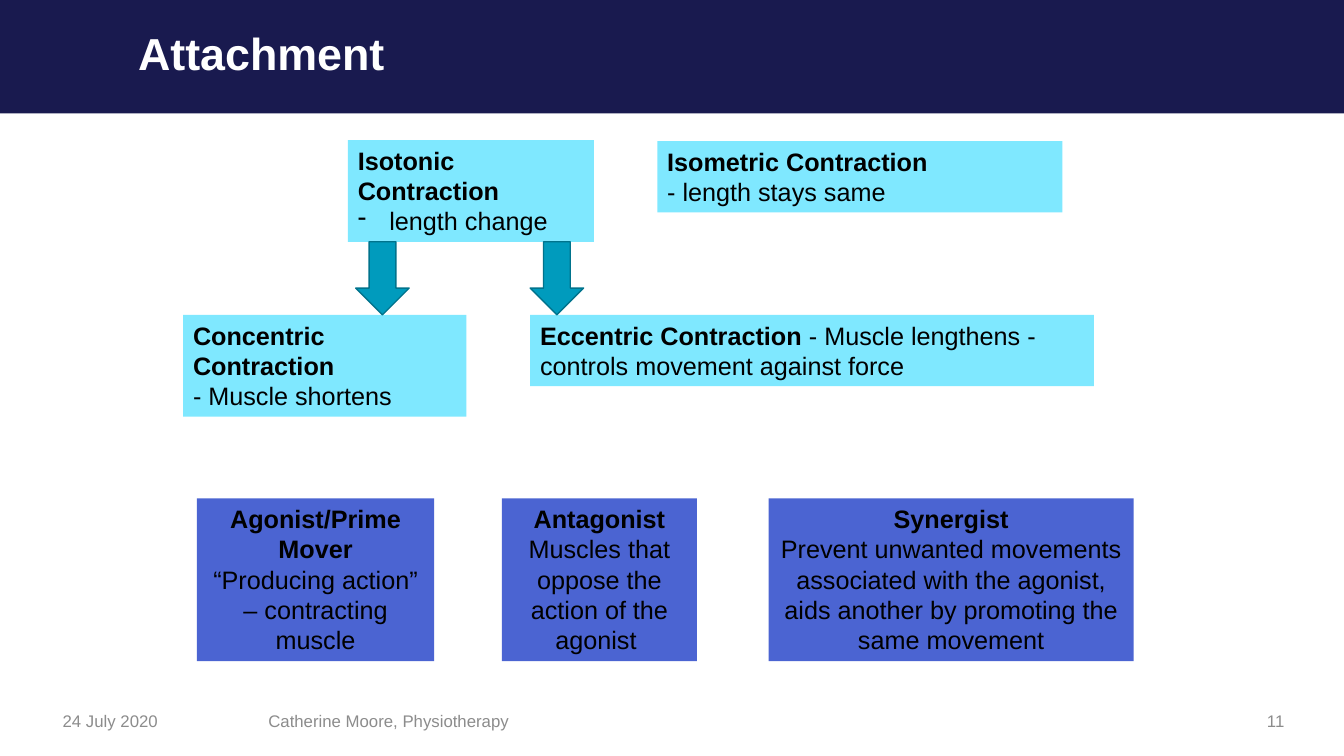
import pptx
import pptx.util
import pptx.dml.color
import pptx.enum.shapes
import pptx.enum.text
import pptx.oxml.ns
import lxml.etree
from dataclasses import dataclass

Pt = pptx.util.Pt
SHAPE = pptx.enum.shapes.MSO_SHAPE
ALIGN = pptx.enum.text.PP_ALIGN
ANCHOR = pptx.enum.text.MSO_ANCHOR


@dataclass(frozen=True)
class Theme:
    """Colours, font and type sizes of the slide."""
    font: str = "Arial"
    navy: str = "191A4F"
    cyan: str = "7FE8FF"
    blue: str = "4B64D2"
    teal: str = "009BBD"
    teal_line: str = "00738C"
    white: str = "FFFFFF"
    black: str = "000000"
    grey: str = "8C8C8C"
    title: int = 32
    body: int = 18
    footer: int = 12


THEME = Theme()


def rgb(value):
    """Turn a hex string into a colour."""
    return pptx.dml.color.RGBColor.from_string(value)


def add_dash(p, indent):
    """Give a paragraph a hanging dash bullet."""
    pPr = p._p.get_or_add_pPr()
    pPr.set("marL", str(Pt(indent)))
    pPr.set("indent", str(-Pt(indent)))
    bullet = lxml.etree.SubElement(pPr, pptx.oxml.ns.qn("a:buChar"))
    bullet.set("char", "-")


def write(sp, paragraphs, size=THEME.body, color=THEME.black, align=ALIGN.LEFT,
          anchor=ANCHOR.TOP, spacing=None, dashed=()):
    """Fill a shape with paragraphs, each a list of (text, bold) runs."""
    tf = sp.text_frame
    tf.word_wrap = True
    tf.auto_size = pptx.enum.text.MSO_AUTO_SIZE.NONE
    tf.vertical_anchor = anchor
    for i, runs in enumerate(paragraphs):
        p = tf.add_paragraph() if i else tf.paragraphs[0]
        if i in dashed:
            add_dash(p, 22.5)
        p.alignment = align
        if spacing:
            p.line_spacing = spacing
        for text, bold in runs:
            r = p.add_run()
            r.text = text
            r.font.name = THEME.font
            r.font.size = Pt(size)
            r.font.bold = bold
            r.font.color.rgb = rgb(color)


def add_block(s, kind, box, fill, line=None):
    """Add a flat filled shape in a box given in points."""
    sp = s.shapes.add_shape(kind, *map(Pt, box))
    sp.shadow.inherit = False
    sp.fill.solid()
    sp.fill.fore_color.rgb = rgb(fill)
    if line:
        sp.line.color.rgb = rgb(line)
        sp.line.width = Pt(1)
    else:
        sp.line.fill.background()
    return sp


def add_header(s, box):
    """Draw the band and set the title over it."""
    left, top, width, height = box
    band = add_block(s, SHAPE.RECTANGLE, box, THEME.navy)
    title = s.shapes.title
    title.element.addprevious(band.element)
    title.left, title.top = Pt(left + 91.4), Pt(top - 0.7)
    title.width, title.height = Pt(width - 126.9), Pt(height)
    write(title, [[("Attachment", True)]], size=THEME.title, color=THEME.white,
          anchor=ANCHOR.MIDDLE, spacing=0.9)


def add_contractions(s, box):
    """Draw the contraction types and the arrows between their two levels."""
    left, top, width, height = box
    low, tall, short = top + 124.9, 72.7, 51
    eccentric_left = left + 247.9
    cards = [
        ((left + 117.7, top, 175.7, tall),
         [[("Isotonic Contraction", True)], [("length change", False)]], (1,)),
        ((left + 338.7, top + 0.8, 289.4, short),
         [[("Isometric Contraction", True)], [("- length stays same", False)]], ()),
        ((left, low, 202.3, tall),
         [[("Concentric Contraction", True)], [("- Muscle shortens", False)]], ()),
        ((eccentric_left, low, width - 247.9, short),
         [[("Eccentric Contraction ", True),
           ("- Muscle lengthens - controls movement against force", False)]], ()),
    ]
    for card, paragraphs, dashed in cards:
        sp = add_block(s, SHAPE.RECTANGLE, card, THEME.cyan)
        write(sp, paragraphs, dashed=dashed)
    for x in (left + 123.3, eccentric_left):
        add_block(s, SHAPE.DOWN_ARROW, (x, top + tall, 38.2, low - top - tall),
                  THEME.teal, THEME.teal_line)


def add_roles(s, box):
    """Draw the row of muscle roles."""
    left, top, width, height = box
    roles = [
        (0, 169.6, "Agonist/Prime Mover", "“Producing action” – contracting muscle"),
        (217.9, 139.4, "Antagonist", "Muscles that oppose the action of the agonist "),
        (408.4, width - 408.4, "Synergist",
         "Prevent unwanted movements associated with the agonist, "
         "aids another by promoting the same movement"),
    ]
    for x, w, name, text in roles:
        sp = add_block(s, SHAPE.RECTANGLE, (left + x, top, w, height), THEME.blue)
        write(sp, [[(name, True)], [(text, False)]], align=ALIGN.CENTER)


def add_footer(s, box):
    """Write the date, author and slide number."""
    left, top, width, height = box
    entries = [
        (0, 126.7, "24 July 2020", ALIGN.LEFT),
        (146.9, 272.9, "Catherine Moore, Physiotherapy", ALIGN.LEFT),
        (width - 229, 229, "11", ALIGN.RIGHT),
    ]
    for x, w, text, align in entries:
        sp = s.shapes.add_textbox(Pt(left + x), Pt(top), Pt(w), Pt(height))
        write(sp, [[(text, False)]], size=THEME.footer, color=THEME.grey,
              align=align, anchor=ANCHOR.MIDDLE)


def main():
    """Build the slide and save it."""
    prs = pptx.Presentation()
    prs.slide_width, prs.slide_height = Pt(960), Pt(540)
    s = prs.slides.add_slide(prs.slide_layouts[5])
    add_header(s, (0, 0, 960, 81))
    add_contractions(s, (130.8, 100, 650.5, 175.9))
    add_roles(s, (140.6, 356, 669.2, 116.3))
    add_footer(s, (37.7, 500.7, 886.8, 28.8))
    prs.save("out.pptx")


if __name__ == "__main__":
    main()
